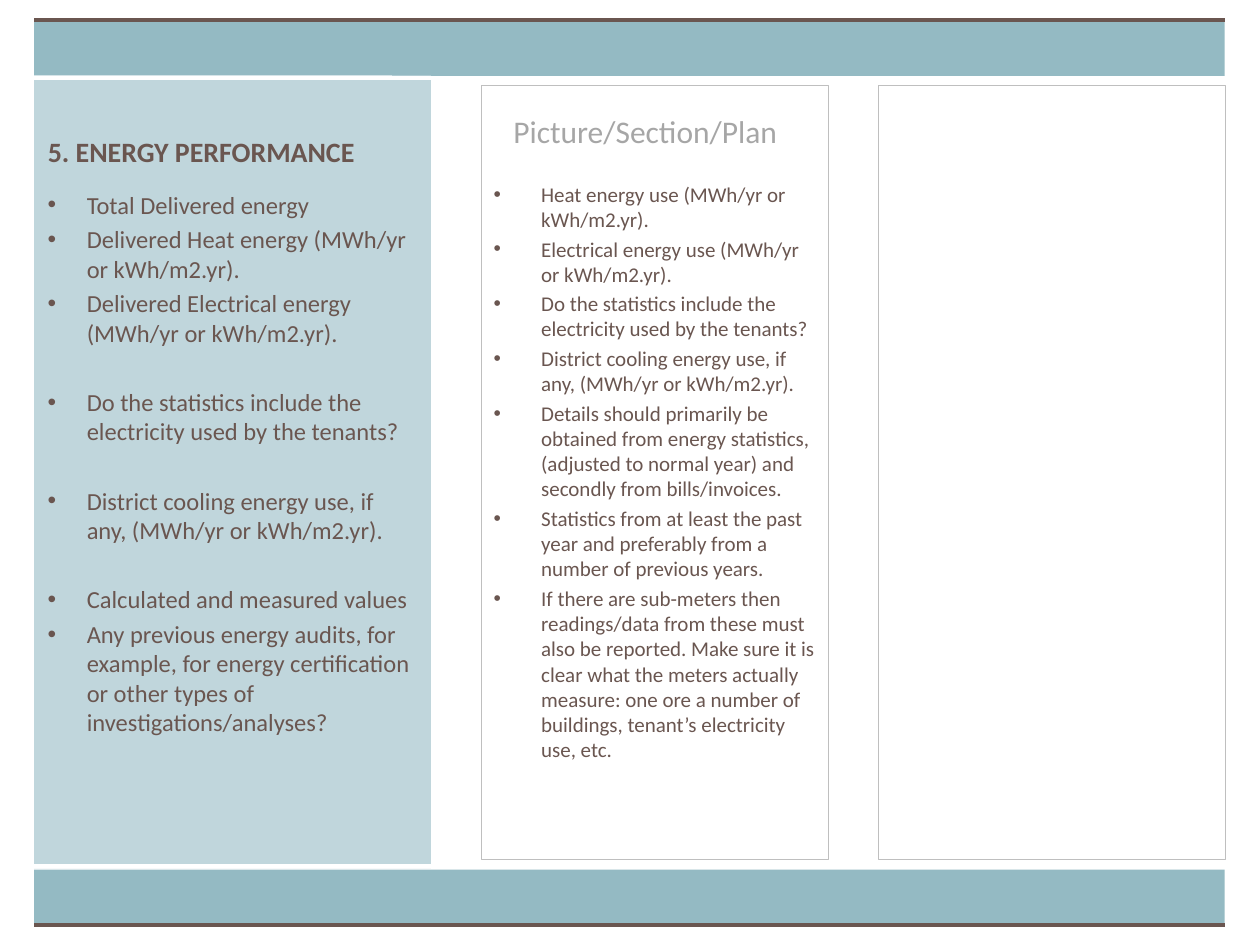
from lxml.etree import SubElement
from pptx import Presentation
from pptx.dml.color import RGBColor
from pptx.enum.shapes import MSO_CONNECTOR as Connector, MSO_SHAPE as Shape
from pptx.enum.text import MSO_ANCHOR as Anchor, MSO_AUTO_SIZE as AutoSize, PP_ALIGN as Align
from pptx.oxml.ns import qn
from pptx.util import Cm, Pt

FONT = "Calibri"
BROWN = "6A5650"
TEAL = "94BAC3"
PALE_TEAL = "C0D6DC"
WHITE = "FFFFFF"
FRAME_GREY = "BFBFBF"
CAPTION_GREY = "A6A6A6"

MARGIN = 0.69
COLUMN_STEP = 8
FRAME_LEFT = 9.7
FRAME_WIDTH = 7
FRAME_TOP = 1.73
FRAME_HEIGHT = 15.6
BAND_WIDTH = 24
BAND_HEIGHT = 1.12

PERFORMANCE_GROUPS = [
    [
        "Total Delivered energy",
        "Delivered Heat energy (MWh/yr or kWh/m2.yr).",
        "Delivered Electrical energy (MWh/yr or kWh/m2.yr).",
    ],
    ["Do the statistics include the electricity used by the tenants?"],
    ["District cooling energy use, if any, (MWh/yr or kWh/m2.yr)."],
    [
        "Calculated and measured values",
        "Any previous energy audits, for example, for energy certification "
        "or other types of investigations/analyses?",
    ],
]
STATISTICS_GROUPS = [
    [
        "Heat energy use (MWh/yr or kWh/m2.yr).",
        "Electrical energy use (MWh/yr or kWh/m2.yr).",
        "Do the statistics include the electricity used by the tenants?",
        "District cooling energy use, if any, (MWh/yr or kWh/m2.yr).",
        "Details should primarily be obtained from energy statistics, "
        "(adjusted to normal year) and secondly from bills/invoices.",
        "Statistics from at least the past year and preferably from a "
        "number of previous years.",
        "If there are sub-meters then readings/data from these must also be "
        "reported. Make sure it is clear what the meters actually measure: "
        "one ore a number of buildings, tenant’s electricity use, etc.",
    ],
]


def color(hex_value):
    return RGBColor.from_string(hex_value)


def add_panel(slide, left, top, width, height, fill=None, outline=None):
    panel = slide.shapes.add_shape(
        Shape.RECTANGLE, Cm(left), Cm(top), Cm(width), Cm(height))
    panel.shadow.inherit = False
    if fill:
        panel.fill.solid()
        panel.fill.fore_color.rgb = color(fill)
    else:
        panel.fill.background()
    if outline:
        panel.line.color.rgb = color(outline)
        panel.line.width = Pt(0.5)
    else:
        panel.line.fill.background()


def add_rule(slide, left, right, y, stroke):
    rule = slide.shapes.add_connector(
        Connector.STRAIGHT, Cm(left), Cm(y), Cm(right), Cm(y))
    rule.line.color.rgb = color(stroke)
    rule.line.width = Pt(2.25)
    SubElement(rule.element.spPr, qn("a:effectLst"))


def add_run(paragraph, text, size, ink=BROWN, bold=False):
    run = paragraph.add_run()
    run.text = text
    run.font.name = FONT
    run.font.size = Pt(size)
    run.font.bold = bold
    run.font.color.rgb = color(ink)


def add_text_frame(slide, left, top, width, height):
    box = slide.shapes.add_textbox(Cm(left), Cm(top), Cm(width), Cm(height))
    box.text_frame.word_wrap = True
    return box.text_frame


def set_bullet(paragraph, indent):
    properties = paragraph._p.get_or_add_pPr()
    properties.set("marL", str(Cm(indent)))
    properties.set("indent", str(-Cm(indent)))
    SubElement(properties, qn("a:buFont"), typeface="Arial")
    SubElement(properties, qn("a:buChar"), char="•")


def add_bullets(slide, bounds, groups, size, indent, item_gap, group_gap=0):
    frame = add_text_frame(slide, *bounds)
    paragraph = None
    for group in groups:
        for position, item in enumerate(group):
            if paragraph is None:
                paragraph, gap = frame.paragraphs[0], 0
            else:
                paragraph = frame.add_paragraph()
                gap = item_gap if position else group_gap
            paragraph.space_before = Pt(gap)
            set_bullet(paragraph, indent)
            add_run(paragraph, item, size)


def place_title(slide, text):
    title = slide.shapes.title
    slide.shapes.element.append(title.element)
    title.left, title.top = Cm(0.71), Cm(FRAME_TOP)
    title.width, title.height = Cm(8), Cm(1.78)
    frame = title.text_frame
    frame.word_wrap = True
    frame.auto_size = AutoSize.NONE
    frame.vertical_anchor = Anchor.BOTTOM
    frame.paragraphs[0].alignment = Align.LEFT
    add_run(frame.paragraphs[0], text, 16, bold=True)


def add_backdrop(slide):
    for band_top, edge in ((0.41, 0.41), (17.53, 18.64)):
        add_panel(slide, MARGIN, band_top, BAND_WIDTH, BAND_HEIGHT, TEAL)
        add_rule(slide, MARGIN, MARGIN + BAND_WIDTH, edge, BROWN)
    add_rule(slide, 0.51, 7.9, 1.55, WHITE)
    add_rule(slide, 0.3, 7.7, 17.48, WHITE)
    add_panel(slide, MARGIN, 1.52, 8, 15.98, PALE_TEAL)
    add_rule(slide, 0.51, 9.09, 1.57, WHITE)
    add_rule(slide, 0.3, 9.09, 17.45, WHITE)


def main():
    deck = Presentation()
    deck.slide_width, deck.slide_height = Cm(25.4), Cm(19.05)
    slide = deck.slides.add_slide(deck.slide_layouts[5])

    add_backdrop(slide)
    for column, fill in enumerate((WHITE, None)):
        add_panel(slide, FRAME_LEFT + column * COLUMN_STEP, FRAME_TOP,
                  FRAME_WIDTH, FRAME_HEIGHT, fill, FRAME_GREY)
    caption = add_text_frame(slide, 10.1, 2.13, 6.4, 1.02)
    add_run(caption.paragraphs[0], "Picture/Section/Plan", 18, CAPTION_GREY)
    place_title(slide, "5. ENERGY PERFORMANCE")
    add_bullets(slide, (0.71, 3.7, 7.82, 13.63), PERFORMANCE_GROUPS,
                14, 0.79, 3, 22.7)
    add_bullets(slide, (FRAME_LEFT, 3.53, FRAME_WIDTH, 13.8),
                STATISTICS_GROUPS, 12, 0.96, 2.5)

    deck.save("out.pptx")


if __name__ == "__main__":
    main()
